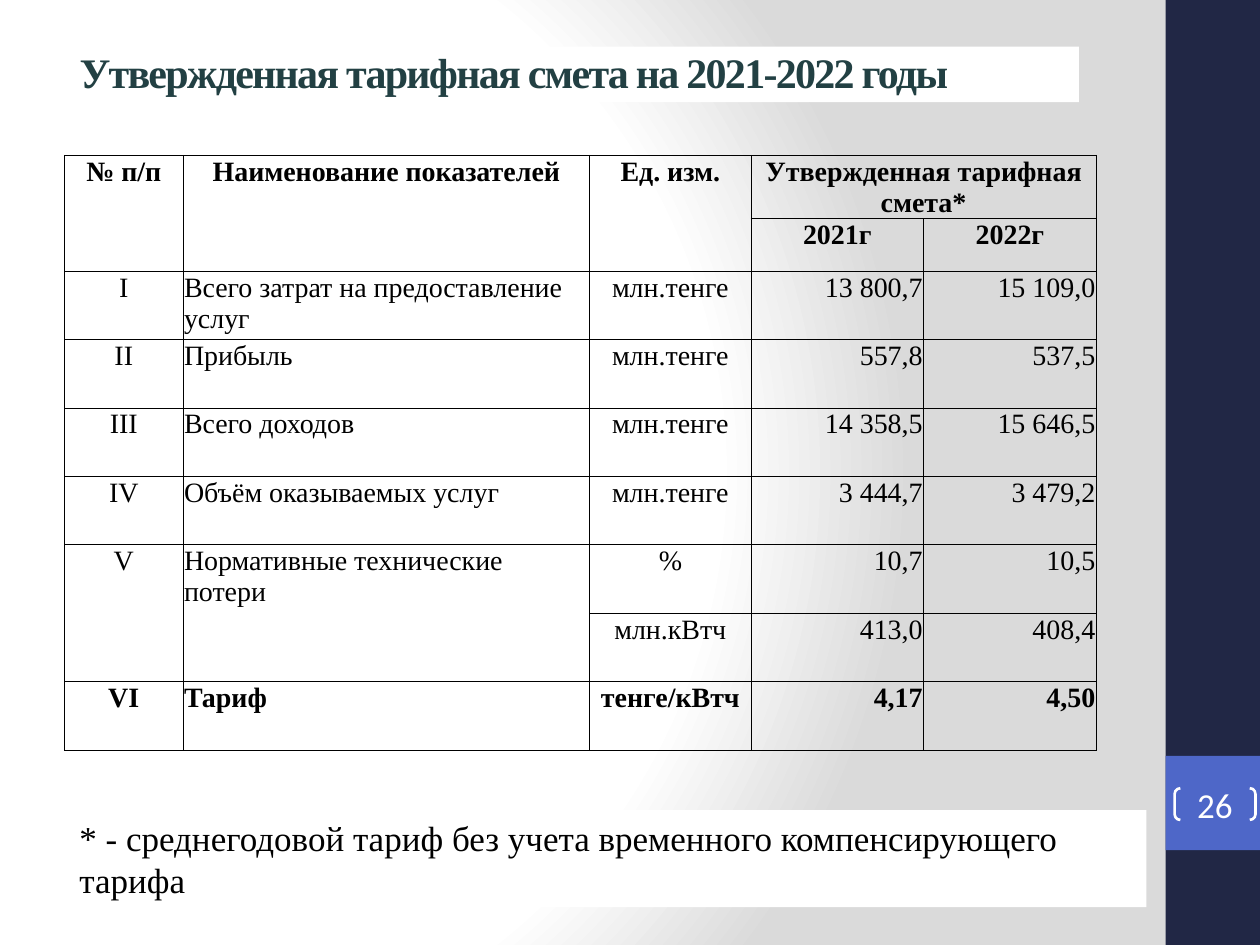
from lxml.etree import SubElement
from pptx import Presentation
from pptx.dml.color import RGBColor
from pptx.enum.shapes import MSO_SHAPE
from pptx.enum.text import MSO_ANCHOR, PP_ALIGN
from pptx.oxml import parse_xml
from pptx.oxml.ns import nsdecls, qn
from pptx.util import Cm, Pt

SERIF = "Times New Roman"
HEADER = ["№ п/п", "Наименование показателей", "Ед. изм.", "Утвержденная тарифная смета*", ""]
ROWS = [
    HEADER,
    ["", "", "", "2021г", "2022г"],
    ["I", "Всего затрат на предоставление услуг", "млн.тенге", "13 800,7", "15 109,0"],
    ["II", "Прибыль", "млн.тенге", "557,8", "537,5"],
    ["III", "Всего доходов", "млн.тенге", "14 358,5", "15 646,5"],
    ["IV", "Объём оказываемых услуг", "млн.тенге", "3 444,7", "3 479,2"],
    ["V", "Нормативные технические потери", "%", "10,7", "10,5"],
    ["", "", "млн.кВтч", "413,0", "408,4"],
    ["VI", "Тариф", "тенге/кВтч", "4,17", "4,50"],
]
HEADER_ROWS = 2
BOLD_ROWS = {0, 1, len(ROWS) - 1}
MERGES = [((0, 0), (1, 0)), ((0, 1), (1, 1)), ((0, 2), (1, 2)), ((0, 3), (0, 4)),
          ((6, 0), (7, 0)), ((6, 1), (7, 1))]
COLUMN_WIDTHS = [2.39, 8.2, 3.25, 3.48, 3.48]
COLUMN_ALIGNS = [PP_ALIGN.CENTER, PP_ALIGN.LEFT, PP_ALIGN.CENTER, PP_ALIGN.RIGHT, PP_ALIGN.RIGHT]


def color(hex_string):
    return RGBColor.from_string(hex_string)


def style(paragraph, size, hex_string, name=SERIF, bold=False, align=PP_ALIGN.LEFT):
    paragraph.alignment = align
    font = paragraph.font
    font.name, font.size, font.bold = name, Pt(size), bold
    font.color.rgb = color(hex_string)


def add_box(slide, left, top, width, height, fill=None, kind=MSO_SHAPE.RECTANGLE):
    shape = slide.shapes.add_shape(kind, Cm(left), Cm(top), Cm(width), Cm(height))
    shape.shadow.inherit = False
    shape.line.fill.background()
    if fill:
        shape.fill.solid()
        shape.fill.fore_color.rgb = color(fill)
    else:
        shape.fill.background()
    return shape


def set_background(slide):
    slide.background.fill.gradient()
    gradient = slide.background._cSld.find(".//" + qn("a:gradFill"))
    stops = "".join(
        f'<a:gs pos="{position * 1000}"><a:srgbClr val="{value}"/></a:gs>'
        for position, value in [(0, "FFFFFF"), (75, "FFFFFF"), (100, "DADADA")])
    radial = parse_xml(
        f'<a:gradFill {nsdecls("a")} rotWithShape="1"><a:gsLst>{stops}</a:gsLst>'
        '<a:path path="circle"><a:fillToRect l="20000" t="50000" r="100000" b="50000"/>'
        '</a:path></a:gradFill>')
    gradient.getparent().replace(gradient, radial)


def add_sidebar(slide, left, top, width, height):
    add_box(slide, left, top, width, height, "212745")
    # Square badge with the bracketed page number
    badge_top = top + 0.8 * height
    add_box(slide, left, badge_top, width, width, "4E67C8")
    number = add_box(slide, left + 0.18, badge_top + 0.65, 1.63, 0.64,
                     kind=MSO_SHAPE.DOUBLE_BRACKET)
    number.adjustments[0] = 0.18
    number.line.color.rgb = color("FFFFFF")
    number.line.width = Pt(1.5)
    frame = number.text_frame
    frame.margin_left = frame.margin_right = frame.margin_top = frame.margin_bottom = 0
    frame.vertical_anchor = MSO_ANCHOR.MIDDLE
    frame.text = "26"
    style(frame.paragraphs[0], 20, "FFFFFF", "Calibri", align=PP_ALIGN.CENTER)


def set_title(slide, left, top, width, height):
    title = slide.shapes.title
    title.left, title.top, title.width, title.height = map(Cm, (left, top, width, height))
    title.fill.solid()
    title.fill.fore_color.rgb = color("FFFFFF")
    title.text_frame.vertical_anchor = MSO_ANCHOR.MIDDLE
    title.text_frame.text = "Утвержденная тарифная смета на 2021-2022 годы"
    paragraph = title.text_frame.paragraphs[0]
    paragraph.line_spacing = 0.9
    style(paragraph, 24, "224043", bold=True)
    # Tighten the letters by one point
    paragraph.runs[0]._r.get_or_add_rPr().set("spc", "-100")


def format_cell(cell, bold, align):
    cell.margin_left = cell.margin_right = cell.margin_top = Cm(0.02)
    cell.margin_bottom = 0
    cell.vertical_anchor = MSO_ANCHOR.TOP
    properties = cell._tc.get_or_add_tcPr()
    for side in ("lnL", "lnR", "lnT", "lnB"):
        line = SubElement(properties, qn(f"a:{side}"), w=str(Pt(0.5)))
        SubElement(SubElement(line, qn("a:solidFill")), qn("a:srgbClr"), val="000000")
    cell.fill.background()
    style(cell.text_frame.paragraphs[0], 16, "000000", bold=bold, align=align)


def add_tariff_table(slide, left, top, width, height):
    table = slide.shapes.add_table(len(ROWS), len(HEADER), Cm(left), Cm(top),
                                   Cm(width), Cm(height)).table
    table.first_row = table.horz_banding = False
    for column, column_width in zip(table.columns, COLUMN_WIDTHS):
        column.width = Cm(column_width)
    for row_index, values in enumerate(ROWS):
        is_header = row_index < HEADER_ROWS
        table.rows[row_index].height = Cm(1.06 if is_header else 1.38)
        for column_index, value in enumerate(values):
            cell = table.cell(row_index, column_index)
            cell.text = value
            align = PP_ALIGN.CENTER if is_header else COLUMN_ALIGNS[column_index]
            format_cell(cell, row_index in BOLD_ROWS, align)
    for first, last in MERGES:
        table.cell(*first).merge(table.cell(*last))


def add_footnote(slide, left, top, width, height):
    frame = add_box(slide, left, top, width, height, "FFFFFF").text_frame
    frame.word_wrap = True
    frame.vertical_anchor = MSO_ANCHOR.TOP
    frame.text = "* - среднегодовой тариф без учета временного компенсирующего тарифа"
    style(frame.paragraphs[0], 20, "000000")


def main():
    presentation = Presentation()
    presentation.slide_width, presentation.slide_height = Cm(25.4), Cm(19.05)
    slide = presentation.slides.add_slide(presentation.slide_layouts[5])
    set_background(slide)
    add_sidebar(slide, 23.5, 0, 1.9, 19.05)
    add_footnote(slide, 1.35, 16.33, 21.76, 1.96)
    add_tariff_table(slide, 1.3, 3.13, 20.8, 12.12)
    set_title(slide, 1.35, 0.94, 20.4, 1.12)
    presentation.save("out.pptx")


if __name__ == "__main__":
    main()
